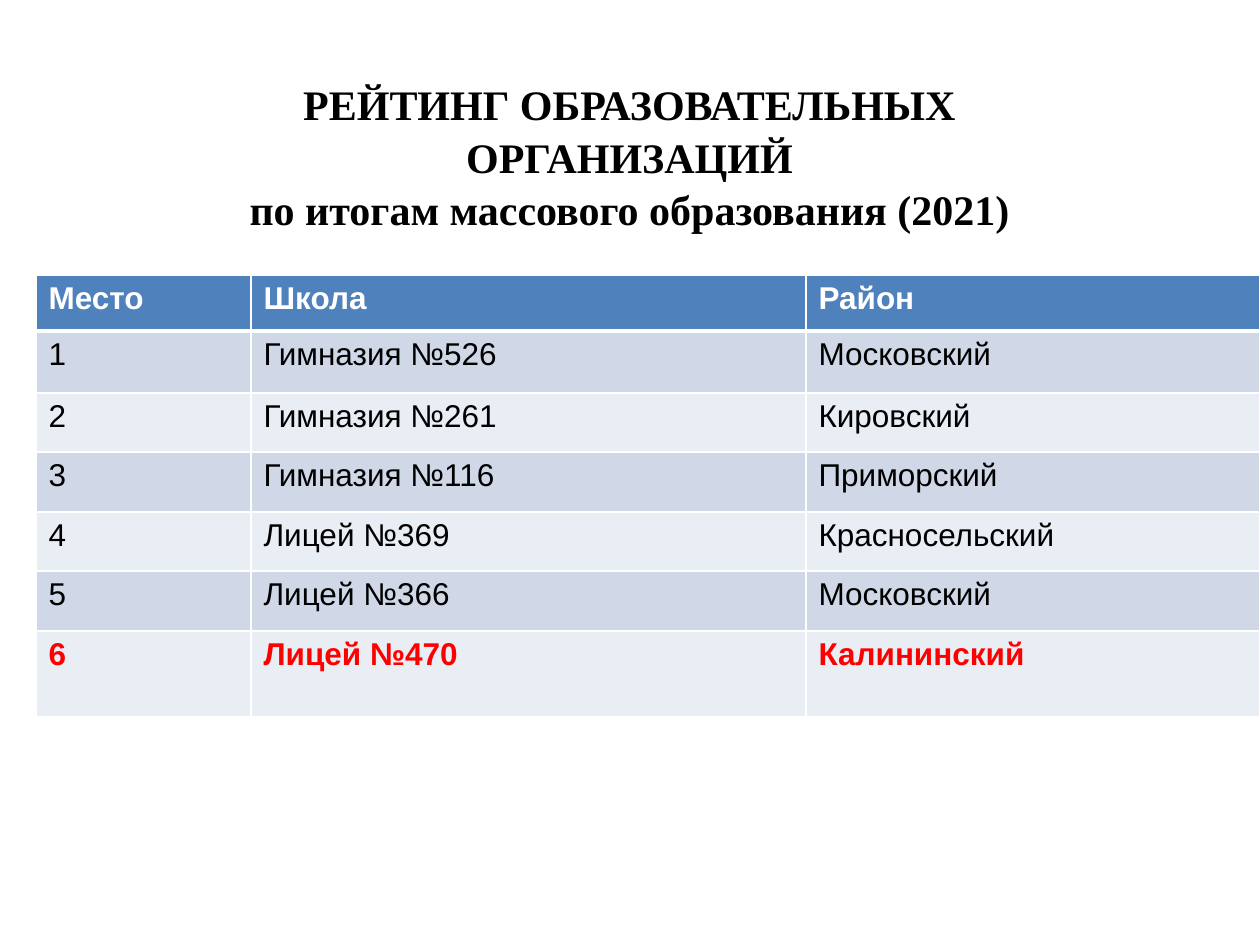
from dataclasses import dataclass

from lxml.etree import SubElement
from pptx import Presentation
from pptx.dml.color import RGBColor
from pptx.enum.text import MSO_ANCHOR, MSO_AUTO_SIZE, PP_ALIGN
from pptx.oxml.ns import qn
from pptx.util import Pt

# Content
TITLE = ("РЕЙТИНГ ОБРАЗОВАТЕЛЬНЫХ ОРГАНИЗАЦИЙ", "по итогам массового образования (2021)")
HEADER = ("Место", "Школа", "Район")
SCHOOLS = [
    ("Гимназия №526", "Московский"),
    ("Гимназия №261", "Кировский"),
    ("Гимназия №116", "Приморский"),
    ("Лицей №369", "Красносельский"),
    ("Лицей №366", "Московский"),
    ("Лицей №470", "Калининский"),
]
HIGHLIGHTED_PLACE = 6

# Geometry in px, 126 to the inch
EMU_PER_PX = 914400 // 126
SLIDE_SIZE = (1260, 945)
TITLE_BOX = (137, 26, 985, 258)
TABLE_LEFT, TABLE_TOP = 36, 275
COLUMN_WIDTHS = (215, 555, 454)
ROW_HEIGHTS = (56, 62, 59, 60, 59, 60, 86)


@dataclass(frozen=True)
class Theme:
    title_font: str = "Times New Roman"
    table_font: str = "Arial"
    title_size: int = 24
    table_size: int = 18
    text: str = "000000"
    highlight: str = "FF0000"
    header_text: str = "FFFFFF"
    header_fill: str = "4F81BD"
    bands: tuple = ("D0D8E8", "E9EDF4")
    border: str = "FFFFFF"


THEME = Theme()


def px(length):
    return round(length * EMU_PER_PX)


def write(frame, text, *, font, size, color, bold=False, align=PP_ALIGN.LEFT, spacing=None):
    paragraph = frame.paragraphs[0]
    paragraph.text = text
    paragraph.alignment = align
    paragraph.line_spacing = spacing
    for run in paragraph.runs:
        run.font.name = font
        run.font.size = Pt(size)
        run.font.bold = bold
        run.font.color.rgb = RGBColor.from_string(color)


def draw_borders(cell, top, bottom):
    properties = cell._tc.get_or_add_tcPr()
    sides = (("lnL", 1), ("lnR", 1), ("lnT", top), ("lnB", bottom))
    for position, (side, width) in enumerate(sides):
        line = SubElement(properties, qn(f"a:{side}"), w=str(Pt(width)))
        fill = SubElement(line, qn("a:solidFill"))
        SubElement(fill, qn("a:srgbClr"), val=THEME.border)
        properties.insert(position, line)  # borders precede the cell fill


def add_title(slide):
    title = slide.shapes.title
    title.left, title.top, title.width, title.height = map(px, TITLE_BOX)
    frame = title.text_frame
    frame.word_wrap = True
    frame.auto_size = MSO_AUTO_SIZE.NONE
    frame.vertical_anchor = MSO_ANCHOR.MIDDLE
    frame.margin_left = frame.margin_right = frame.margin_top = frame.margin_bottom = 0
    write(frame, "\v".join(TITLE), font=THEME.title_font, size=THEME.title_size,
          color=THEME.text, bold=True, align=PP_ALIGN.CENTER, spacing=1.05)


def add_ranking(slide):
    rows = [HEADER] + [(str(place), *school) for place, school in enumerate(SCHOOLS, 1)]
    ranking = slide.shapes.add_table(
        len(rows), len(HEADER), px(TABLE_LEFT), px(TABLE_TOP),
        px(sum(COLUMN_WIDTHS)), px(sum(ROW_HEIGHTS))).table
    for column, width in zip(ranking.columns, COLUMN_WIDTHS):
        column.width = px(width)

    for place, (row, height, texts) in enumerate(zip(ranking.rows, ROW_HEIGHTS, rows)):
        row.height = px(height)
        is_header = place == 0
        is_highlighted = place == HIGHLIGHTED_PLACE
        if is_header:
            fill, color = THEME.header_fill, THEME.header_text
        else:
            fill = THEME.bands[(place - 1) % 2]
            color = THEME.highlight if is_highlighted else THEME.text
        for cell, text in zip(row.cells, texts):
            cell.fill.solid()
            cell.fill.fore_color.rgb = RGBColor.from_string(fill)
            draw_borders(cell, top=3 if place == 1 else 1, bottom=3 if is_header else 1)
            write(cell.text_frame, text, font=THEME.table_font, size=THEME.table_size,
                  color=color, bold=is_header or is_highlighted)


def main():
    deck = Presentation()
    deck.slide_width, deck.slide_height = map(px, SLIDE_SIZE)
    slide = deck.slides.add_slide(deck.slide_layouts.get_by_name("Title Only"))
    add_title(slide)
    add_ranking(slide)
    deck.save("out.pptx")


if __name__ == "__main__":
    main()
